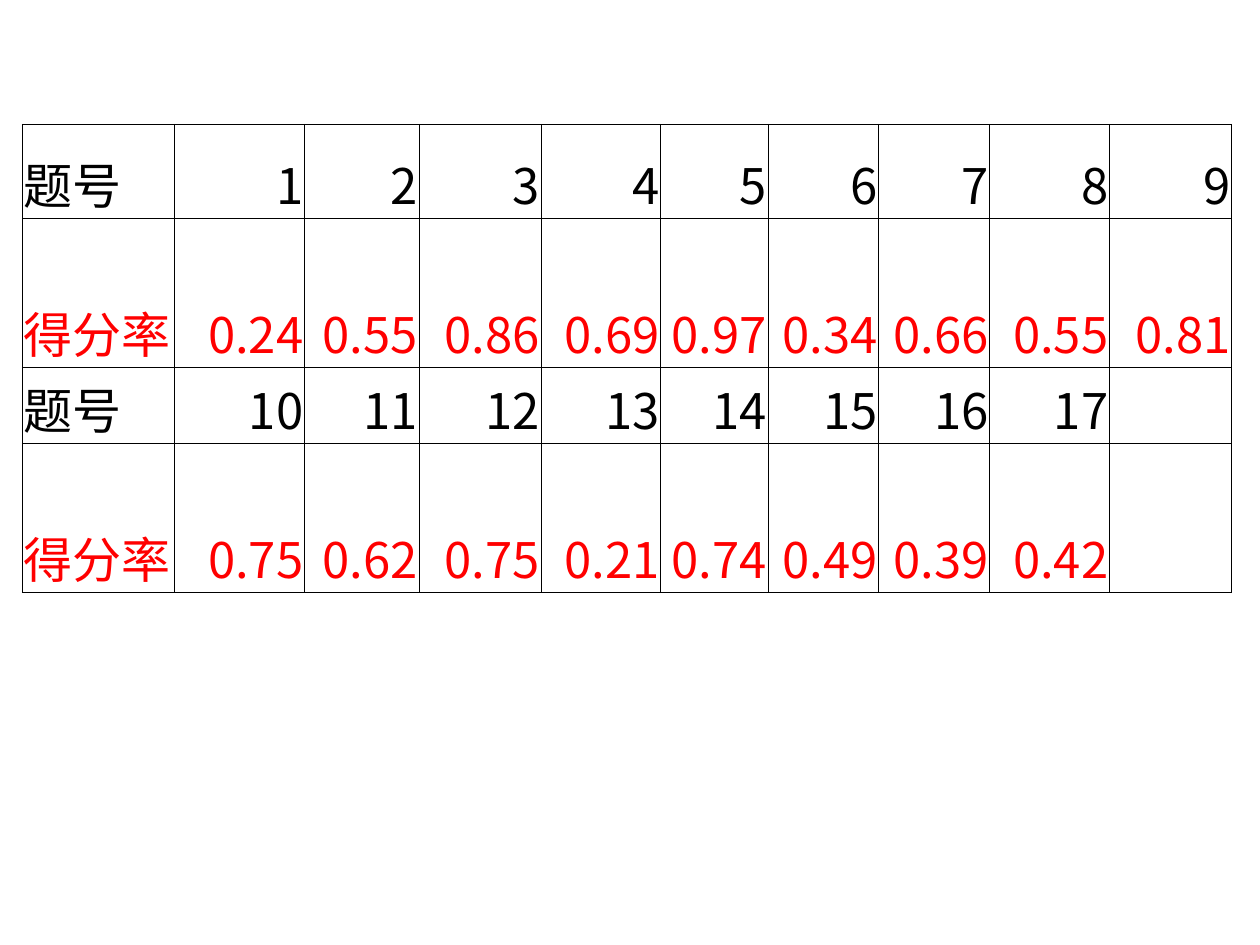
from dataclasses import dataclass

from lxml import etree
from pptx import Presentation
from pptx.dml.color import RGBColor
from pptx.enum.text import MSO_ANCHOR, PP_ALIGN
from pptx.oxml.ns import qn
from pptx.util import Pt

BOTTOM = MSO_ANCHOR.BOTTOM
LEFT, RIGHT = PP_ALIGN.LEFT, PP_ALIGN.RIGHT
BLANK_LAYOUT = 6
BORDER_TAGS = ("a:lnL", "a:lnR", "a:lnT", "a:lnB")


@dataclass(frozen=True)
class Theme:
    font: str = "Noto Sans CJK SC"
    size: float = 28
    number_color: str = "000000"
    rate_color: str = "FF0000"
    background: str = "FFFFFF"
    border_color: str = "000000"
    border_width: float = 0.5
    inset: float = 0.72


THEME = Theme()
TABLE_BOX = (12.75, 71, 691.2, 267.4)
COLUMN_WIDTHS = (87.1, 74.1, 65.5, 69.8, 68.4, 61.2, 63.4, 63.4, 68.4, 69.9)
ROW_HEIGHTS = (54, 85, 43.4, 85)
SCORE_RATES = (
    ("0.24", "0.55", "0.86", "0.69", "0.97", "0.34", "0.66", "0.55", "0.81"),
    ("0.75", "0.62", "0.75", "0.21", "0.74", "0.49", "0.39", "0.42"),
)


def score_rows():
    first_number = 1
    for rates in SCORE_RATES:
        numbers = range(first_number, first_number + len(rates))
        yield ["题号", *map(str, numbers)], THEME.number_color
        yield ["得分率", *rates], THEME.rate_color
        first_number += len(rates)


def draw_borders(cell):
    properties = cell._tc.get_or_add_tcPr()
    for tag in BORDER_TAGS:
        line = etree.SubElement(properties, qn(tag), w=str(Pt(THEME.border_width)))
        fill = etree.SubElement(line, qn("a:solidFill"))
        etree.SubElement(fill, qn("a:srgbClr"), val=THEME.border_color)


def format_cell(cell):
    draw_borders(cell)
    cell.fill.solid()
    cell.fill.fore_color.rgb = RGBColor.from_string(THEME.background)
    cell.vertical_anchor = BOTTOM
    cell.margin_left = cell.margin_right = cell.margin_top = Pt(THEME.inset)
    cell.margin_bottom = Pt(0)


def write_cell(cell, text, color, alignment):
    cell.text_frame.text = text
    paragraph = cell.text_frame.paragraphs[0]
    paragraph.alignment = alignment
    font = paragraph.runs[0].font
    font.name = THEME.font
    font.size = Pt(THEME.size)
    font.bold = False
    font.color.rgb = RGBColor.from_string(color)
    etree.SubElement(font._element, qn("a:ea"), typeface=THEME.font)


def add_score_table(slide, box):
    left, top, width, height = map(Pt, box)
    table = slide.shapes.add_table(
        len(ROW_HEIGHTS), len(COLUMN_WIDTHS), left, top, width, height
    ).table
    table.first_row = table.horz_banding = False
    for column, column_width in zip(table.columns, COLUMN_WIDTHS):
        column.width = Pt(column_width)
    for row, row_height in zip(table.rows, ROW_HEIGHTS):
        row.height = Pt(row_height)
    for cell in table.iter_cells():
        format_cell(cell)
    for row, (texts, color) in zip(table.rows, score_rows()):
        for index, (cell, text) in enumerate(zip(row.cells, texts)):
            write_cell(cell, text, color, RIGHT if index else LEFT)


def main():
    presentation = Presentation()
    presentation.slide_width, presentation.slide_height = Pt(720), Pt(540)
    slide = presentation.slides.add_slide(presentation.slide_layouts[BLANK_LAYOUT])
    add_score_table(slide, TABLE_BOX)
    presentation.save("out.pptx")


if __name__ == "__main__":
    main()
